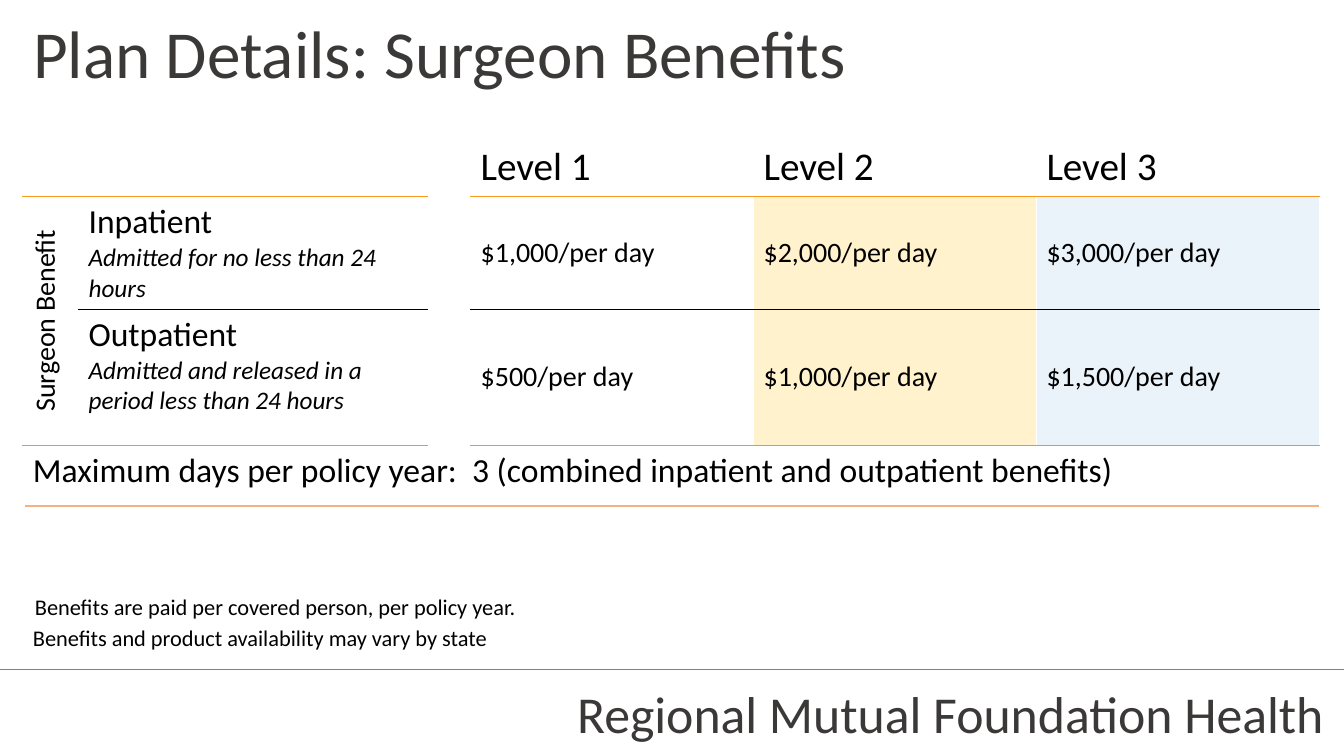
from lxml import etree
from pptx import Presentation
from pptx.dml.color import RGBColor
from pptx.enum.shapes import MSO_CONNECTOR
from pptx.enum.text import MSO_ANCHOR as Anchor, PP_ALIGN as Align
from pptx.oxml.ns import qn
from pptx.util import Cm, Pt

color = RGBColor.from_string
WHITE, ORANGE, BLACK, GRAY, CHARCOAL = "FFFFFF", "F8981D", "000000", "A5A5A5", "3B3838"
GAP_COLUMN = 2


def write(frame, text, size=20, ink=BLACK, italic=False, align=Align.LEFT, anchor=Anchor.TOP):
    """Add a paragraph to the frame, using the first one while it is empty."""
    frame.vertical_anchor = anchor
    para = frame.paragraphs[0] if not frame.text else frame.add_paragraph()
    para.alignment = align
    para.space_before = Pt(0)
    span = para.add_run()
    span.text = text
    span.font.name = "Calibri"
    span.font.size = Pt(size)
    span.font.italic = italic
    span.font.color.rgb = color(ink)


def add_border(cell, side, ink, width=1):
    line = etree.SubElement(cell._tc.get_or_add_tcPr(), qn(f"a:ln{side}"), w=str(Pt(width)))
    fill = etree.SubElement(line, qn("a:solidFill"))
    etree.SubElement(fill, qn("a:srgbClr"), val=ink)


deck = Presentation()
deck.slide_width, deck.slide_height = Cm(33.87), Cm(19.05)
page = deck.slides.add_slide(deck.slide_layouts[5])

# Title
title = page.shapes.title
title.left, title.top, title.width, title.height = Cm(0.58), Cm(-0.3), Cm(32.66), Cm(3.18)
title.text_frame.word_wrap = True
write(title.text_frame, "Plan Details: Surgeon Benefits", size=48, ink=CHARCOAL, anchor=Anchor.MIDDLE)

# Benefit table
column_widths = [1.4, 8.81, 1.07, 7.13, 7.13, 7.13]
row_heights = [2.54, 2.84, 3.43]
grid = page.shapes.add_table(3, 6, Cm(0.58), Cm(2.41), Cm(sum(column_widths)), Cm(sum(row_heights)))
table = grid.table
table.first_row = table.horz_banding = False
for column, width in zip(table.columns, column_widths):
    column.width = Cm(width)
for row, height in zip(table.rows, row_heights):
    row.height = Cm(height)

column_fills = [WHITE, WHITE, WHITE, WHITE, "FFF2CC", "EAF2FA"]
rules = [WHITE, ORANGE, BLACK, GRAY]  # above each row, and below the last
for r in range(3):
    for c in range(6):
        cell = table.cell(r, c)
        above, below = rules[r], rules[r + 1]
        if c == GAP_COLUMN:
            above = below = WHITE
        elif c == 0:
            above, below = [(WHITE, ORANGE), (ORANGE, GRAY), (WHITE, GRAY)][r]
        for side, ink in zip("LRTB", (WHITE, WHITE, above, below)):
            add_border(cell, side, ink)
        cell.fill.solid()
        cell.fill.fore_color.rgb = color(column_fills[c] if r else WHITE)

benefit = table.cell(1, 0)
benefit.merge(table.cell(2, 0))
benefit._tc.get_or_add_tcPr().set("vert", "vert270")
write(benefit.text_frame, "Surgeon Benefit", align=Align.CENTER)
benefit.vertical_anchor = Anchor.MIDDLE

care_types = [
    ("Inpatient", "Admitted for no less than 24 hours"),
    ("Outpatient", "Admitted and released in a period less than 24 hours"),
]
for r, (care, condition) in enumerate(care_types, start=1):
    frame = table.cell(r, 1).text_frame
    write(frame, care, size=24)
    write(frame, condition, size=18, italic=True)

levels = [
    ("Level 1", "$1,000/per day", "$500/per day"),
    ("Level 2", "$2,000/per day", "$1,000/per day"),
    ("Level 3", "$3,000/per day", "$1,500/per day"),
]
for c, entries in enumerate(levels, start=3):
    for r, entry in enumerate(entries):
        cell = table.cell(r, c)
        write(cell.text_frame, entry, size=20 if r else 28)
        cell.vertical_anchor = Anchor.MIDDLE if r else Anchor.BOTTOM

# Notes under the table and footer name
footer_format = dict(size=37, ink=CHARCOAL, align=Align.RIGHT, anchor=Anchor.MIDDLE)
texts = [
    ("Maximum days per policy year:  3 (combined inpatient and outpatient benefits)",
     (0.58, 11.18, 32.66, 1.27), dict(size=24)),
    ("Benefits are paid per covered person, per policy year.", (0.63, 14.81, 14.45, 0.94), dict(size=16)),
    ("Benefits and product availability may vary by state", (0.58, 15.6, 14.45, 0.94), dict(size=16)),
    ("Regional Mutual Foundation Health", (13.59, 16.36, 20.02, 3.18), footer_format),
]
for text, place, text_format in texts:
    box = page.shapes.add_textbox(*map(Cm, place))
    box.text_frame.word_wrap = True
    write(box.text_frame, text, **text_format)

# Rules across the page
for left, right, height, ink, width in [(0.63, 33.25, 12.75, "F4B183", 1.5), (0, 33.87, 16.87, "808080", 0.5)]:
    rule = page.shapes.add_connector(MSO_CONNECTOR.STRAIGHT, Cm(left), Cm(height), Cm(right), Cm(height))
    rule.line.color.rgb = color(ink)
    rule.line.width = Pt(width)
    etree.SubElement(rule._element.spPr, qn("a:effectLst"))

deck.save("out.pptx")
